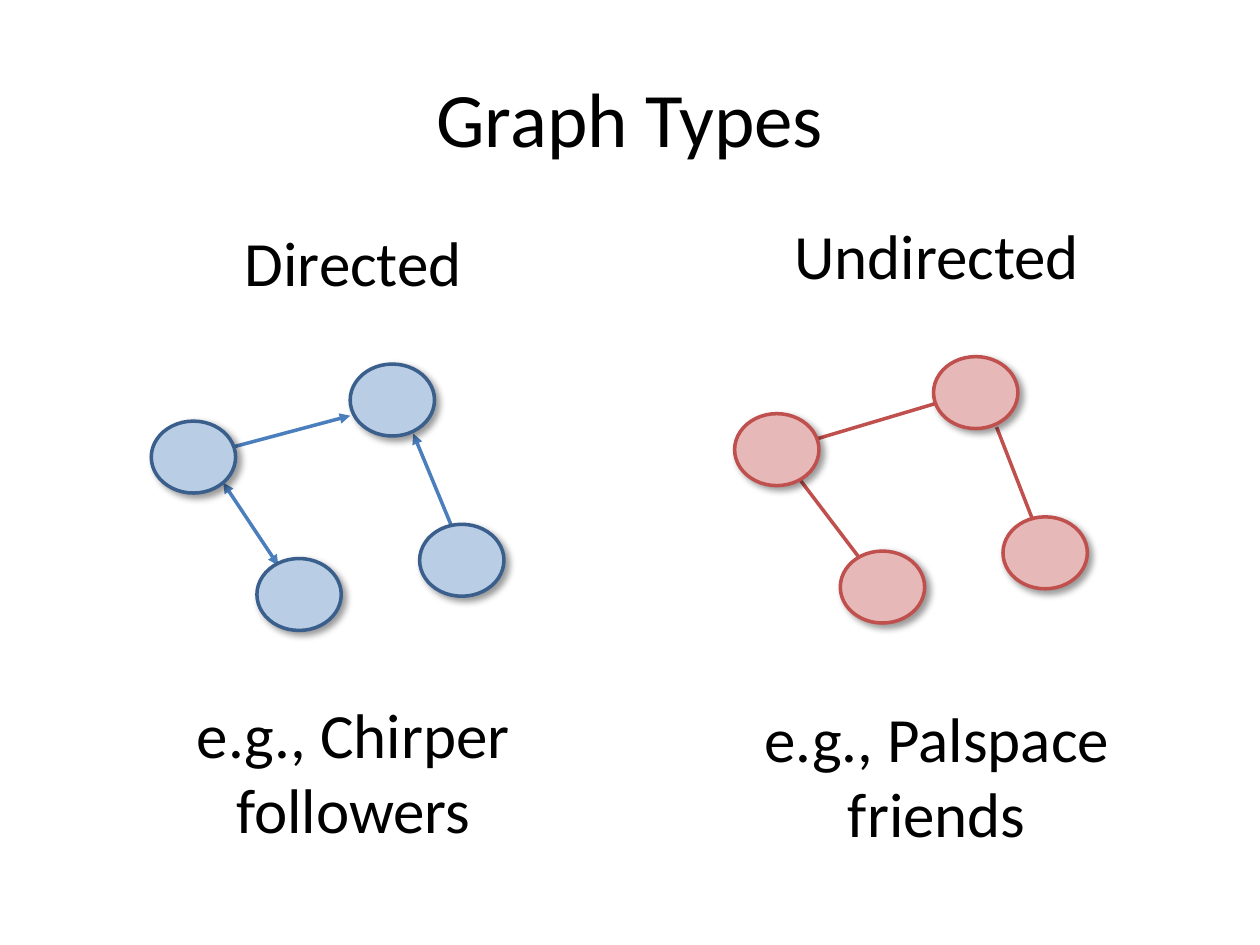
from pptx import Presentation
from pptx.dml.color import RGBColor
from pptx.enum.shapes import MSO_CONNECTOR, MSO_SHAPE
from pptx.enum.text import MSO_ANCHOR, PP_ALIGN
from pptx.oxml import parse_xml
from pptx.oxml.ns import nsdecls, qn
from pptx.util import Cm, Pt

OVAL = MSO_SHAPE.OVAL
STRAIGHT = MSO_CONNECTOR.STRAIGHT
CENTER = PP_ALIGN.CENTER
MIDDLE, TOP = MSO_ANCHOR.MIDDLE, MSO_ANCHOR.TOP

SHADOW = (
    f'<a:outerShdw {nsdecls("a")} blurRad="50800" dist="38100" dir="2700000" '
    'algn="tl" rotWithShape="0"><a:srgbClr val="000000">'
    '<a:alpha val="40000"/></a:srgbClr></a:outerShdw>'
)


def color(value):
    return RGBColor.from_string(value)


def add_text(page, text, left, top, width, height, size, anchor):
    box = page.shapes.add_textbox(Cm(left), Cm(top), Cm(width), Cm(height))
    frame = box.text_frame
    for name, value in {"word_wrap": True, "vertical_anchor": anchor}.items():
        setattr(frame, name, value)
    para = frame.paragraphs[0]
    para.alignment = CENTER
    span = para.add_run()
    span.text = text
    for name, value in {"name": "Calibri", "size": Pt(size)}.items():
        setattr(span.font, name, value)
    span.font.color.rgb = color("000000")


deck = Presentation()
deck.slide_width, deck.slide_height = Cm(25.4), Cm(19.05)
page = deck.slides.add_slide(deck.slide_layouts[6])

# Title
add_text(page, "Graph Types", 1.27, 0.76, 22.86, 3.18, 44, MIDDLE)

# Both graphs place their nodes at the same offsets
node_offsets = [(4.01, 0), (5.41, 3.23), (0, 1.15), (2.13, 3.92)]
node_width, node_height = 1.7, 1.45
label_width = 8.15

# Each edge: start, end, arrowheads at its start and end
graphs = [
    {
        "left": 3.05, "top": 7.34,
        "fill": "B9CDE5", "outline": "3A5F8C", "edge": "4B7EBC",
        "edges": [
            ((4.5, 9.73), (5.61, 11.4), ("headEnd", "tailEnd")),
            ((4.29, 9.12), (7.06, 8.38), ("tailEnd",)),
            ((9.32, 11.13), (8.33, 8.74), ("tailEnd",)),
        ],
        "heading": ("Directed", 4.39),
        "example": ("e.g., Chirper followers", 13.89),
    },
    {
        "left": 14.81, "top": 7.19,
        "fill": "E6B9B8", "outline": "C0504D", "edge": "C0504D",
        "edges": [
            ((15.67, 9.07), (17.35, 11.28), ()),
            ((16.05, 8.97), (19.48, 7.95), ()),
            ((21.08, 11.15), (20.09, 8.61), ()),
        ],
        "heading": ("Undirected", 4.24),
        "example": ("e.g., Palspace friends", 13.97),
    },
]

for graph in graphs:
    # Edges lie behind the nodes
    for start, end, arrowheads in graph["edges"]:
        edge = page.shapes.add_connector(STRAIGHT, *map(Cm, start + end))
        edge.line.color.rgb = color(graph["edge"])
        edge.line.width = Pt(2)
        properties = edge._element.spPr
        outline = properties.find(qn("a:ln"))
        for arrowhead in arrowheads:
            outline.append(parse_xml(f'<a:{arrowhead} {nsdecls("a")} type="triangle"/>'))
        properties.append(parse_xml(f'<a:effectLst {nsdecls("a")}/>'))

    # Nodes with a soft shadow
    for across, down in node_offsets:
        node = page.shapes.add_shape(
            OVAL, Cm(graph["left"] + across), Cm(graph["top"] + down),
            Cm(node_width), Cm(node_height))
        node.fill.solid()
        node.fill.fore_color.rgb = color(graph["fill"])
        node.line.color.rgb = color(graph["outline"])
        node.line.width = Pt(2)
        node.shadow.inherit = False
        node._element.spPr.find(qn("a:effectLst")).append(parse_xml(SHADOW))

    # Heading above and example below
    for part, height in (("heading", 1.8), ("example", 3.33)):
        text, top = graph[part]
        add_text(page, text, graph["left"], top, label_width, height, 36, TOP)

deck.save("out.pptx")
